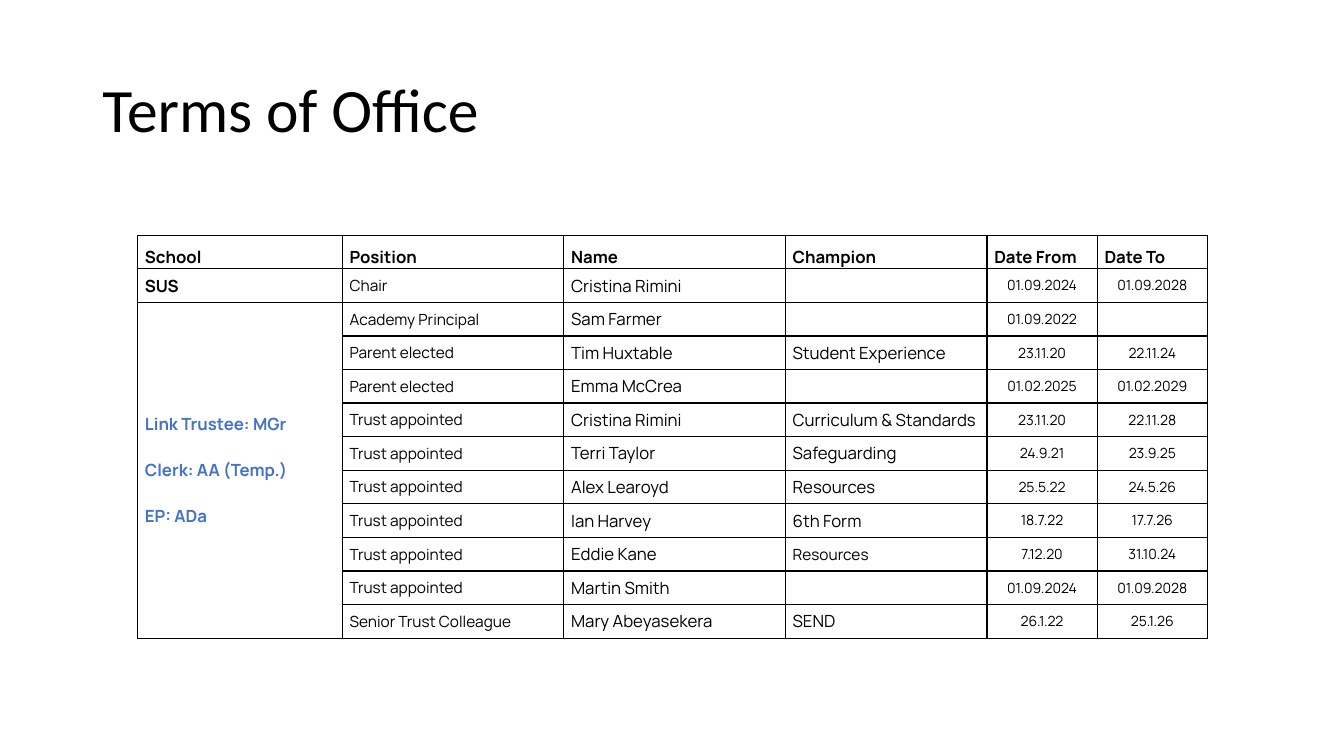
from lxml import etree
from pptx import Presentation
from pptx.dml.color import RGBColor
from pptx.enum.text import MSO_ANCHOR, MSO_AUTO_SIZE, PP_ALIGN
from pptx.oxml.ns import qn
from pptx.util import Pt

PX = 9525
TITLE_ONLY = 5
LEFT, CENTER = PP_ALIGN.LEFT, PP_ALIGN.CENTER
MIDDLE, BOTTOM = MSO_ANCHOR.MIDDLE, MSO_ANCHOR.BOTTOM
NO_AUTOFIT = MSO_AUTO_SIZE.NONE

BLACK, WHITE, BLUE = "000000", "FFFFFF", "4472C4"
TABLE_FONT = "Manrope"
TABLE_LEFT, TABLE_TOP, ROW_HEIGHT = 131, 224, 32
COLUMN_WIDTHS = [195, 211, 211, 192, 105, 105]
CELL_INSET = 7

HEADINGS = ["School", "Position", "Name", "Champion", "Date From", "Date To"]
SCHOOL = "SUS"
CONTACTS = ["Link Trustee: MGr", "Clerk: AA (Temp.)", "EP: ADa"]
MEMBERS = [
    ("Chair", "Cristina Rimini", "", "01.09.2024", "01.09.2028"),
    ("Academy Principal", "Sam Farmer", "", "01.09.2022", ""),
    ("Parent elected", "Tim Huxtable", "Student Experience", "23.11.20", "22.11.24"),
    ("Parent elected", "Emma McCrea", "", "01.02.2025", "01.02.2029"),
    ("Trust appointed", "Cristina Rimini", "Curriculum & Standards", "23.11.20", "22.11.28"),
    ("Trust appointed", "Terri Taylor", "Safeguarding", "24.9.21", "23.9.25"),
    ("Trust appointed", "Alex Learoyd", "Resources", "25.5.22", "24.5.26"),
    ("Trust appointed", "Ian Harvey", "6th Form", "18.7.22", "17.7.26"),
    ("Trust appointed", "Eddie Kane", "Resources", "7.12.20", "31.10.24"),
    ("Trust appointed", "Martin Smith", "", "01.09.2024", "01.09.2028"),
    ("Senior Trust Colleague", "Mary Abeyasekera", "SEND", "26.1.22", "25.1.26"),
]
# Size and alignment of the member columns, from Position to Date To
MEMBER_STYLES = [(11, LEFT), (12, LEFT), (12, LEFT), (10, CENTER), (10, CENTER)]
SMALL_CHAMPION = "Eddie Kane"


def px(length):
    return int(length * PX)


def color(hex_code):
    return RGBColor.from_string(hex_code)


def add_span(para, text, size, font, hex_code=BLACK, bold=False):
    span = para.add_run()
    span.text = text
    span.font.size = Pt(size)
    span.font.name = font
    span.font.bold = bold
    span.font.color.rgb = color(hex_code)


def add_title(page, text):
    title = page.shapes.title
    title.left, title.top, title.width, title.height = map(px, (88, 38, 1104, 139))
    frame = title.text_frame
    frame.auto_size = NO_AUTOFIT
    frame.vertical_anchor = MIDDLE
    para = frame.paragraphs[0]
    para.alignment = LEFT
    para.line_spacing = 0.9
    add_span(para, text, 44, "Calibri")


def add_borders(cell):
    properties = cell._tc.get_or_add_tcPr()
    for side in ("a:lnL", "a:lnR", "a:lnT", "a:lnB"):
        line = etree.SubElement(properties, qn(side), w=str(Pt(1)))
        fill = etree.SubElement(line, qn("a:solidFill"))
        etree.SubElement(fill, qn("a:srgbClr"), val=BLACK)


def format_cell(cell, fill=None):
    cell.margin_left = cell.margin_right = px(CELL_INSET)
    cell.margin_top = cell.margin_bottom = 0
    cell.vertical_anchor = MIDDLE
    add_borders(cell)
    if fill:
        cell.fill.solid()
        cell.fill.fore_color.rgb = color(fill)
    else:
        cell.fill.background()


def write_cell(cell, text, size=12, align=LEFT, bold=False):
    para = cell.text_frame.paragraphs[0]
    para.alignment = align
    if text:
        add_span(para, text, size, TABLE_FONT, bold=bold)


def write_contacts(cell):
    frame = cell.text_frame
    for index, contact in enumerate(CONTACTS):
        para = frame.add_paragraph() if index else frame.paragraphs[0]
        if index:
            para.space_before = Pt(16.4)
        add_span(para, contact, 12, TABLE_FONT, BLUE, bold=True)


def add_terms_table(page):
    row_count = len(MEMBERS) + 1
    table = page.shapes.add_table(
        row_count, len(HEADINGS), px(TABLE_LEFT), px(TABLE_TOP),
        px(sum(COLUMN_WIDTHS)), px(ROW_HEIGHT * row_count)).table
    table.first_row = table.horz_banding = False
    for column, width in zip(table.columns, COLUMN_WIDTHS):
        column.width = px(width)
    for r in range(row_count):
        for c in range(len(HEADINGS)):
            format_cell(table.cell(r, c), WHITE if r and c == 1 else None)

    for c, heading in enumerate(HEADINGS):
        cell = table.cell(0, c)
        cell.vertical_anchor = BOTTOM
        write_cell(cell, heading, bold=True)
    write_cell(table.cell(1, 0), SCHOOL, bold=True)
    table.cell(2, 0).merge(table.cell(row_count - 1, 0))
    write_contacts(table.cell(2, 0))

    for r, member in enumerate(MEMBERS, 1):
        for c, (text, (size, align)) in enumerate(zip(member, MEMBER_STYLES), 1):
            if HEADINGS[c] == "Champion" and member[1] == SMALL_CHAMPION:
                size = 11
            write_cell(table.cell(r, c), text, size, align)


def main():
    deck = Presentation()
    deck.slide_width, deck.slide_height = px(1280), px(720)
    page = deck.slides.add_slide(deck.slide_layouts[TITLE_ONLY])
    add_title(page, "Terms of Office")
    add_terms_table(page)
    deck.save("out.pptx")


if __name__ == "__main__":
    main()
